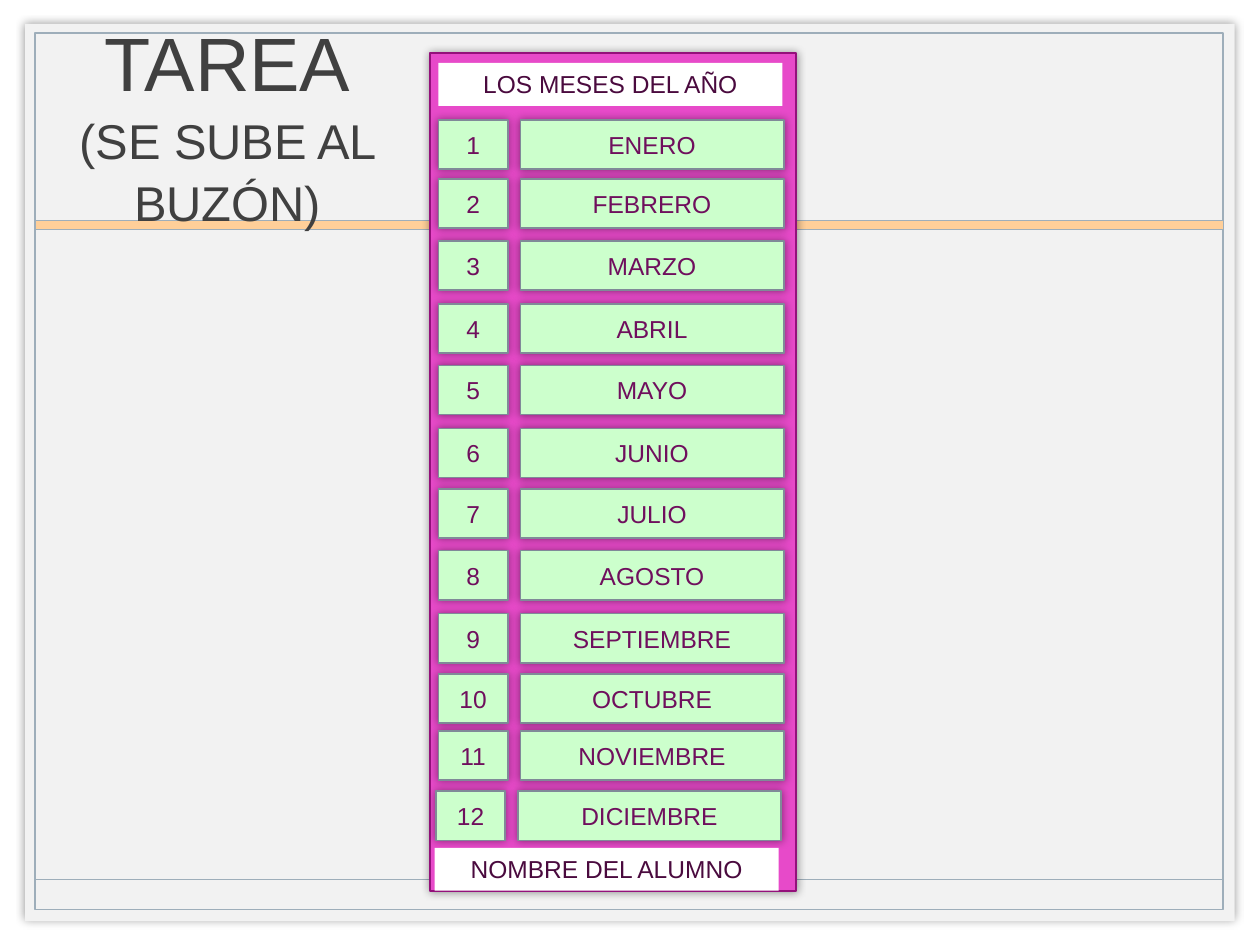
from dataclasses import dataclass
from typing import Optional

from lxml import etree
from pptx import Presentation
from pptx.dml.color import RGBColor
from pptx.enum import shapes, text
from pptx.oxml.ns import qn
from pptx.util import Inches, Pt

COLORS = {
    "page": "F2F2F2", "frame": "9EAEBA", "band": "FFCF99", "title": "404040",
    "panel": "E74AC9", "panel_edge": "94107B", "cell": "CCFFCC",
    "cell_edge": "808A98", "cell_text": "6F0F5D",
    "label": "FFFFFF", "label_text": "4A0A3E", "shadow": "000000",
}
FONT = "Arial"


@dataclass
class Box:
    left: float
    top: float
    width: float
    height: float
    fill: Optional[str] = None
    edge: Optional[str] = None
    edge_width: float = 1
    shadow: bool = False


@dataclass
class Month:
    name: str
    top: float
    shift: float = 0


MONTHS = [
    Month("ENERO", 0.95), Month("FEBRERO", 1.42), Month("MARZO", 1.91),
    Month("ABRIL", 2.41), Month("MAYO", 2.9), Month("JUNIO", 3.4),
    Month("JULIO", 3.88), Month("AGOSTO", 4.37), Month("SEPTIEMBRE", 4.87),
    Month("OCTUBRE", 5.35), Month("NOVIEMBRE", 5.8),
    Month("DICIEMBRE", 6.28, shift=-0.02),
]


def rgb(name: str) -> RGBColor:
    return RGBColor.from_string(COLORS[name])


def add_soft_shadow(shape) -> None:
    effects = shape._element.spPr.find(qn("a:effectLst"))
    shadow = etree.SubElement(effects, qn("a:outerShdw"), blurRad=str(Pt(5)),
                              dist="0", dir="0", algn="ctr", rotWithShape="0")
    color = etree.SubElement(shadow, qn("a:srgbClr"), val=COLORS["shadow"])
    etree.SubElement(color, qn("a:alpha"), val="40000")


def draw_box(slide, box: Box):
    shape = slide.shapes.add_shape(
        shapes.MSO_SHAPE.RECTANGLE, Inches(box.left), Inches(box.top),
        Inches(box.width), Inches(box.height))
    shape.shadow.inherit = False
    if box.fill:
        shape.fill.solid()
        shape.fill.fore_color.rgb = rgb(box.fill)
    else:
        shape.fill.background()
    if box.edge:
        shape.line.color.rgb = rgb(box.edge)
        shape.line.width = Pt(box.edge_width)
    else:
        shape.line.fill.background()
    if box.shadow:
        add_soft_shadow(shape)
    return shape


def write(shape, words: str, color: str, anchor=text.MSO_ANCHOR.MIDDLE) -> None:
    frame = shape.text_frame
    frame.word_wrap = True
    frame.vertical_anchor = anchor
    paragraph = frame.paragraphs[0]
    paragraph.text = words
    paragraph.alignment = text.PP_ALIGN.CENTER
    paragraph.font.name = FONT
    paragraph.font.size = Pt(14)
    paragraph.font.color.rgb = rgb(color)


def draw_cell(slide, left: float, top: float, width: float, words: str) -> None:
    cell = Box(left, top, width, 0.39, "cell", "cell_edge", shadow=True)
    write(draw_box(slide, cell), words, "cell_text")


def draw_label(slide, left: float, top: float, words: str) -> None:
    label = draw_box(slide, Box(left, top, 2.73, 0.34, "label"))
    write(label, words, "label_text", text.MSO_ANCHOR.TOP)


def draw_background(slide) -> None:
    draw_box(slide, Box(0.2, 0.19, 9.6, 7.12, "page", shadow=True))
    draw_box(slide, Box(0.28, 0.26, 9.43, 6.96, edge="frame"))
    footer_rule = slide.shapes.add_connector(
        shapes.MSO_CONNECTOR.STRAIGHT, Inches(0.28), Inches(6.98),
        Inches(9.71), Inches(6.98))
    footer_rule.line.color.rgb = rgb("frame")
    footer_rule.line.width = Pt(1)
    etree.SubElement(footer_rule._element.spPr, qn("a:effectLst"))
    draw_box(slide, Box(0.28, 1.75, 9.43, 0.07, "band", "frame", 0.25))


def draw_title(slide) -> None:
    title = slide.shapes.add_textbox(Inches(0.19), Inches(0.27),
                                     Inches(3.23), Inches(1.37))
    frame = title.text_frame
    frame.word_wrap = True
    frame.vertical_anchor = text.MSO_ANCHOR.MIDDLE
    heading = frame.paragraphs[0]
    heading.alignment = text.PP_ALIGN.CENTER
    heading.line_spacing = 1.07
    heading.font.name = FONT
    heading.font.color.rgb = rgb("title")
    task = heading.add_run()
    task.text = "TAREA"
    task.font.size = Pt(43.2)
    heading.add_line_break()
    instruction = heading.add_run()
    instruction.text = "(SE SUBE AL BUZÓN)"
    instruction.font.size = Pt(27.9)


def main() -> None:
    deck = Presentation()
    deck.slide_width, deck.slide_height = Inches(10), Inches(7.5)
    slide = deck.slides.add_slide(deck.slide_layouts[6])

    # Page frame and title
    draw_background(slide)
    draw_title(slide)

    # Panel with one row per month
    draw_box(slide, Box(3.41, 0.42, 2.91, 6.65, "panel", "panel_edge", shadow=True))
    for number, month in enumerate(MONTHS, start=1):
        draw_cell(slide, 4.13 + month.shift, month.top, 2.09, month.name)
        draw_cell(slide, 3.48 + month.shift, month.top, 0.55, str(number))

    # Panel heading and student name
    draw_label(slide, 3.48, 0.5, "LOS MESES DEL AÑO")
    draw_label(slide, 3.45, 6.73, "NOMBRE DEL ALUMNO")

    deck.save("out.pptx")


if __name__ == "__main__":
    main()
